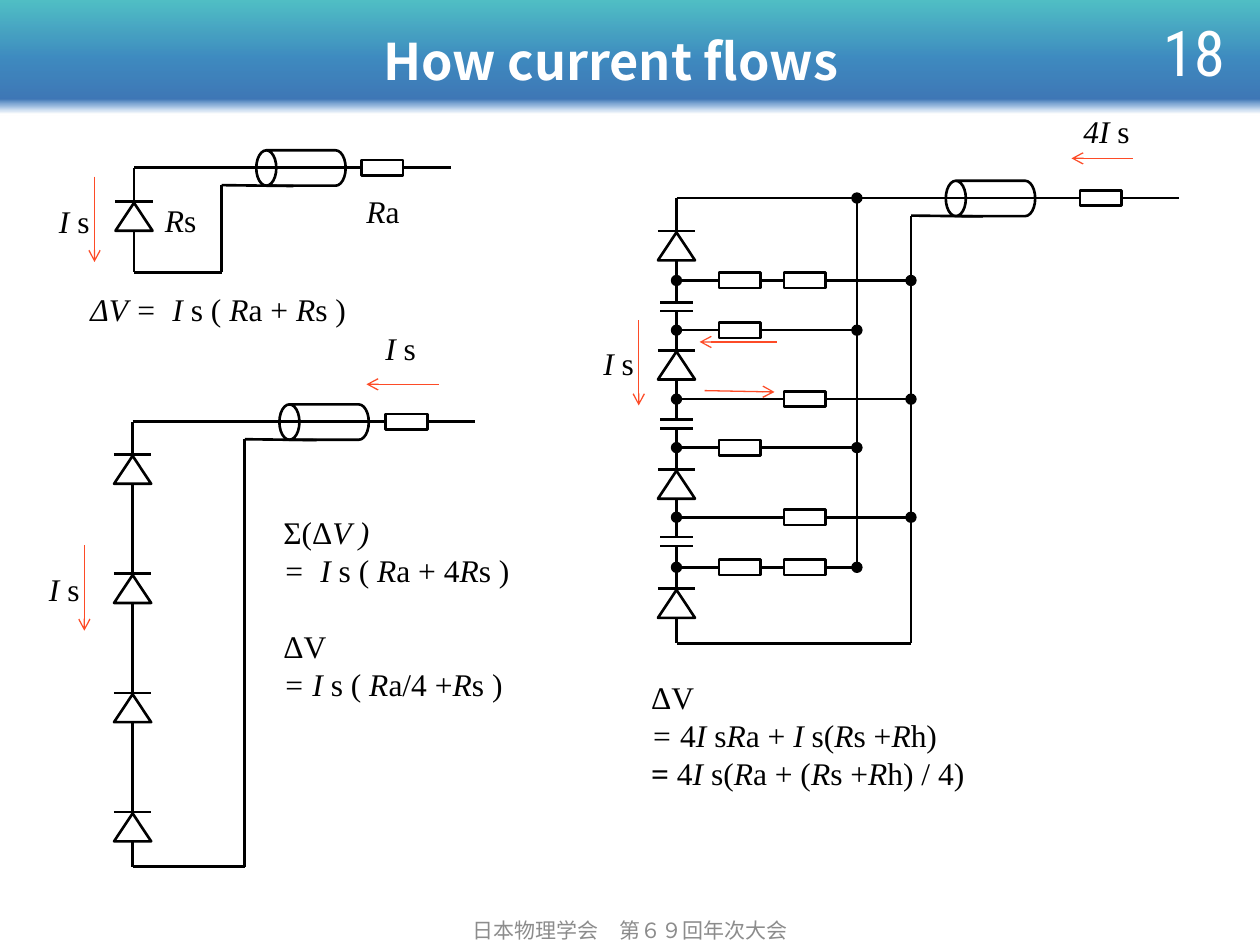
"""Build the slide 'How current flows' with three diode circuits."""
from itertools import pairwise
from lxml.etree import SubElement
from pptx import Presentation
from pptx.dml.color import RGBColor as Rgb
from pptx.enum.shapes import MSO_CONNECTOR as Conn, MSO_SHAPE as Kind
from pptx.enum.text import MSO_ANCHOR as Anchor, PP_ALIGN as Align
from pptx.oxml import parse_xml
from pptx.oxml.ns import nsdecls, qn
from pptx.util import Pt

HUES = {"ink": "000000", "red": "FD4B27", "white": "FFFFFF", "gray": "8C8C8C"}
SANS, SERIF, SLIM = "Noto Sans CJK JP", "Times New Roman", "Roboto Condensed"

deck = Presentation()
deck.slide_width, deck.slide_height = Pt(720), Pt(540)
slide = deck.slides.add_slide(deck.slide_layouts[5])
shapes = slide.shapes


def wire(x1, y1, x2, y2, hue="ink", width=1.5, start=None, end=None):
    link = shapes.add_connector(Conn.STRAIGHT, Pt(x1), Pt(y1), Pt(x2), Pt(y2))
    if start is not None:
        link.begin_connect(start, 3)
    if end is not None:
        link.end_connect(end, 1)
    link.line.color.rgb = Rgb.from_string(HUES[hue])
    link.line.width = Pt(width)
    SubElement(link._element.spPr, qn("a:effectLst"))
    return link


def part(kind, x, y, w, h, solid=False):
    item = shapes.add_shape(kind, Pt(x - w / 2), Pt(y - h / 2), Pt(w), Pt(h))
    item.shadow.inherit = False
    item.line.color.rgb = Rgb.from_string(HUES["ink"])
    item.line.width = Pt(1.5)
    if solid:
        item.fill.solid()
        item.fill.fore_color.rgb = Rgb.from_string(HUES["ink"])
    else:
        item.fill.background()
    return item


band = part(Kind.RECTANGLE, 360, 33, 720, 66)
band.line.fill.background()
stops = [(0, "19ACB3", 75), (50, "0066AC", 100), (50, "0066AC", 75),
         (85, "004B9E", 75), (98, "005CBF", 0)]
stops.pop(1)
marks = "".join(
    f'<a:gs pos="{pos * 1000}"><a:srgbClr val="{hue}">'
    f'<a:alpha val="{alpha * 1000}"/></a:srgbClr></a:gs>'
    for pos, hue, alpha in stops)
fade = parse_xml(f'<a:gradFill {nsdecls("a")} rotWithShape="1"><a:gsLst>{marks}'
                 '</a:gsLst><a:lin ang="5400000" scaled="0"/></a:gradFill>')
blank = band._element.spPr.find(qn("a:noFill"))
blank.getparent().replace(blank, fade)
title = shapes.title
title._element.addprevious(band._element)

LEFT, BUS, BACK = 386.6, 489.7, 520.6
STEP = 68.1
circuits = [
    (76.6, 95.8, 172, 218.5, 257.8, 126.7),
    (75.8, 241, 185.2, 232.3, 271.4, 139.9),
    (BUS, 113.2, 566, 629, 673.9, BACK),
]
for x, y, can, res, tip, back in circuits:
    tube = part(Kind.CAN, can, y + 0.2, 20.2, 51.1)
    tube.adjustments[0] = 0.567
    tube.rotation = 270
    box = part(Kind.RECTANGLE, res, y, 23.8, 8.8)
    wire(x, y, res - 11.9, y, end=box)
    wire(res + 11.9, y, tip, y, start=box)
    wire(back, y + 10, back + 41, y + 10.5)

wire(LEFT, 113.2, BUS, 113.2)
for x, y, back, foot in [(76.6, 105.8, 126.7, 155.6), (75.8, 251, 139.9, 495.2)]:
    wire(back, y, back, foot)
    wire(back, foot, x, foot)
wire(BACK, 367.6, LEFT, 367.6)

chains = [
    (76.6, 95.8, 155.6, [115.2]),
    (75.8, 241, 495.2, [259.8 + STEP * i for i in range(4)]),
    (LEFT, 113.2, 367.6, [132.1 + STEP * i for i in range(4)]),
]
for x, top, foot, bars in chains:
    for y in bars:
        wire(x - 10.7, y, x + 10.7, y)
        part(Kind.ISOSCELES_TRIANGLE, x, y + 8.7, 21.2, 16)
    wire(x, top, x, bars[0])
    wire(x, bars[-1] + 16.7, x, foot)
    for i, (y, below) in enumerate(pairwise(bars)):
        if x != LEFT:
            wire(x, y + 16.7, x, below)
            continue
        plate = 172.7 + 67.1 * i
        wire(x, y + 16.7, x, plate)
        wire(x, plate + 5.1, x, below)
        for level in (plate, plate + 5.1):
            wire(x - 9.4, level, x + 9.4, level)

NEAR, FAR = 422.8, 459.9
rows = [
    (160.3, BACK, [NEAR, FAR]),
    (188.7, BUS, [NEAR]),
    (228.1, BACK, [FAR]),
    (255.8, BUS, [NEAR]),
    (295.6, BACK, [FAR]),
    (324.2, BUS, [NEAR, FAR]),
]
part(Kind.OVAL, BUS, 113.2, 5, 5, True)
for y, end, spots in rows:
    part(Kind.OVAL, LEFT, y, 5, 5, True)
    part(Kind.OVAL, end, y, 5, 5, True)
    x, last = LEFT + 2.5, None
    for spot in spots:
        box = part(Kind.RECTANGLE, spot, y, 23.8, 8.8)
        wire(x, y, spot - 11.9, y, start=last, end=box)
        x, last = spot + 11.9, box
    wire(x, y, end - 2.5, y, start=last)
for x, top, foot in [(BUS, [113.2], []), (BACK, [123.2], [367.6])]:
    levels = top + [y for y, end, _ in rows if end == x] + foot
    for y, below in pairwise(levels):
        wire(x, y, x, below)

arrows = [
    (54, 101, 54, 149.7), (365, 183, 365, 231.7), (48.2, 311.5, 48.2, 360.4),
    (250.6, 219.6, 209.4, 219.6), (444, 195.4, 399.8, 195.4),
    (402.6, 223.2, 442.6, 224), (647.4, 90.5, 612.3, 90.5),
]
for ends in arrows:
    link = wire(*ends, hue="red", width=0.75)
    SubElement(link.get_or_add_ln(), qn("a:tailEnd"), type="arrow")

title.left, title.top, title.width, title.height = Pt(25), Pt(15), Pt(648), Pt(39)
foot = shapes.add_textbox(Pt(246), Pt(519), Pt(228), Pt(23))
page = shapes.add_textbox(Pt(643.7), Pt(15), Pt(63.4), Pt(29))
heads = [
    (title, "How current flows", SANS, 28.8, "white", Align.CENTER, Anchor.MIDDLE),
    (foot, "日本物理学会　第６９回年次大会", SANS, 12, "gray", Align.CENTER, Anchor.BOTTOM),
    (page, "18", SLIM, 36, "white", Align.RIGHT, Anchor.MIDDLE),
]
for box, words, face, size, hue, side, anchor in heads:
    frame = box.text_frame
    frame.word_wrap = True
    frame.vertical_anchor = anchor
    para = frame.paragraphs[0]
    para.alignment = side
    run = para.add_run()
    run.text = words
    run.font.name, run.font.size = face, Pt(size)
    run.font.bold = box is title
    run.font.color.rgb = Rgb.from_string(HUES[hue])
    SubElement(run.font._element, qn("a:ea"), typeface=face)
frame = foot.text_frame
frame.margin_left = frame.margin_right = frame.margin_top = frame.margin_bottom = Pt(3)

notes = [
    (26.6, 111.6, 33.2, ["|I |s"]),
    (202.3, 106, 42, ["|R|a"]),
    (87.1, 111, 42, ["|R|s"]),
    (44.6, 162, 176, ["|ΔV =  I |s (| R|a + |R|s )"]),
    (337.7, 193, 33.2, ["|I |s"]),
    (20.9, 322, 33.2, ["|I |s"]),
    (213.1, 184.3, 33.2, ["|I |s"]),
    (612, 60.5, 45, ["|4I |s"]),
    (154.8, 289.4, 223, ["Σ(Δ|V )", "|=  I |s (| R|a + 4|R|s )",
                         "ΔV", "|= I |s (| R|a/4 +|R|s )"]),
    (365, 383.8, 282, ["ΔV", "|= |4|I |s|R|a + |I| s(|R|s +|R|h)",
                       "!=|| 4|I |s(|R|a + (|R|s +|R|h) / 4)"]),
]
for x, y, width, lines in notes:
    frame = shapes.add_textbox(Pt(x), Pt(y), Pt(width), Pt(7.2 + 21.7 * len(lines))).text_frame
    frame.word_wrap = True
    for i, words in enumerate(lines):
        para = frame.add_paragraph() if i else frame.paragraphs[0]
        para.line_spacing = Pt(21.7)
        if i == 2 and words == "ΔV":
            para.space_before = Pt(21.7)
        for j, bit in enumerate(words.split("|")):
            if not bit:
                continue
            run = para.add_run()
            run.text = bit.lstrip("!")
            run.font.name, run.font.size = SERIF, Pt(18)
            run.font.italic = j % 2 == 1
            run.font.bold = bit.startswith("!")
            run.font.color.rgb = Rgb.from_string(HUES["ink"])

deck.save("out.pptx")
